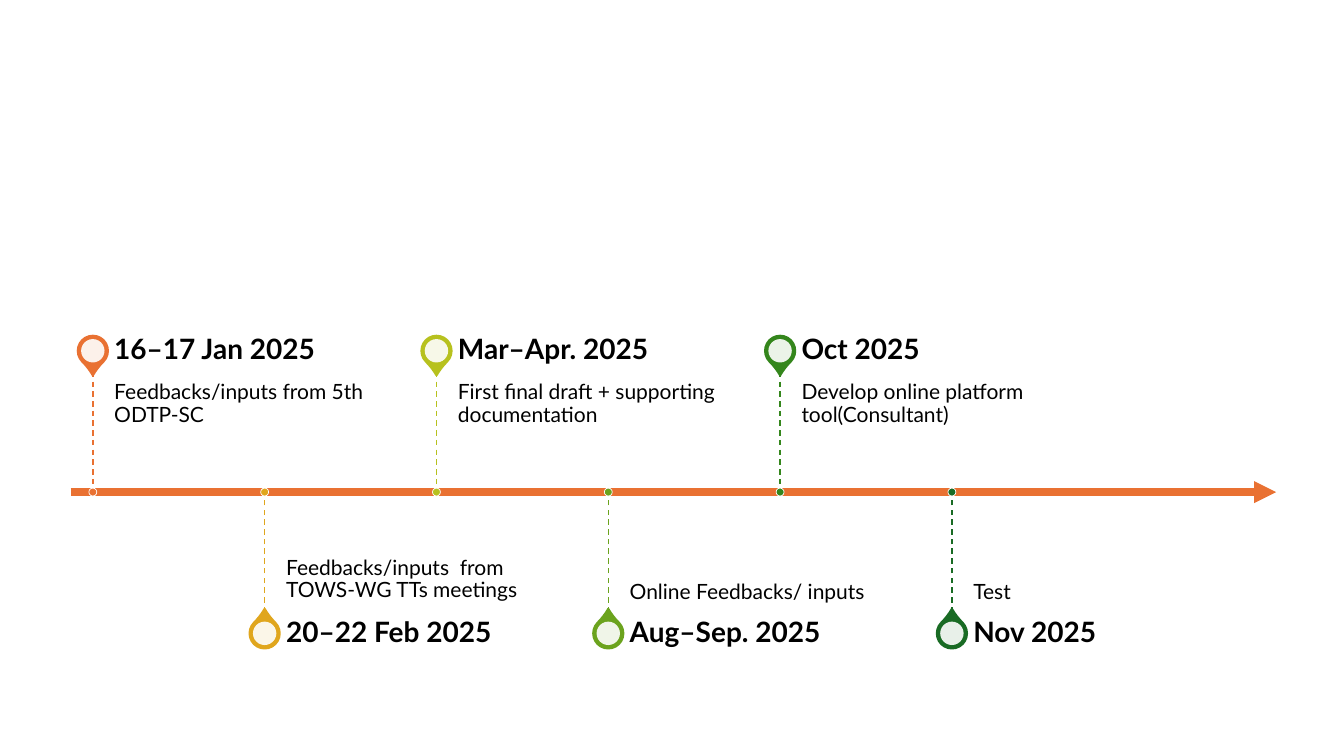
from dataclasses import dataclass

from lxml import etree
from pptx import Presentation
from pptx.dml.color import RGBColor
from pptx.enum.dml import MSO_LINE
from pptx.enum.shapes import MSO_CONNECTOR, MSO_SHAPE
from pptx.enum.text import MSO_ANCHOR
from pptx.oxml.ns import qn
from pptx.shapes.autoshape import Shape
from pptx.shapes.connector import Connector
from pptx.slide import Slide
from pptx.util import Cm, Pt

STRAIGHT = MSO_CONNECTOR.STRAIGHT
TEARDROP, OVAL = MSO_SHAPE.TEAR, MSO_SHAPE.OVAL
DASH = MSO_LINE.DASH
TOP, MIDDLE, BOTTOM = MSO_ANCHOR.TOP, MSO_ANCHOR.MIDDLE, MSO_ANCHOR.BOTTOM

BLACK = RGBColor(0x00, 0x00, 0x00)
WHITE = RGBColor(0xFF, 0xFF, 0xFF)
ORANGE = RGBColor(0xE9, 0x71, 0x32)
AMBER = RGBColor(0xE0, 0xA6, 0x1D)
LIME = RGBColor(0xB7, 0xC1, 0x1E)
LEAF = RGBColor(0x6B, 0xA3, 0x1D)
GREEN = RGBColor(0x34, 0x86, 0x1C)
FOREST = RGBColor(0x19, 0x6B, 0x24)
FONT = "Lato"

# Lengths in centimetres
AXIS_LEFT, AXIS_RIGHT, AXIS_Y = 1.78, 32.16, 12.4
FIRST_X, STEP_X = 2.34, 4.33
STEM, PIN_DISTANCE = 3.03, 3.56
PIN_SIZE, HOLE_SIZE, DOT_SIZE = 0.76, 0.59, 0.2
TEXT_OFFSET, TEXT_WIDTH, DATE_HEIGHT = 0.54, 7.21, 1.07


@dataclass(frozen=True)
class Milestone:
    date: str
    description: str
    color: RGBColor


@dataclass(frozen=True)
class TextStyle:
    size: float
    bold: bool
    anchor: MSO_ANCHOR
    insets: tuple[float, float, float, float]  # left, top, right, bottom


DATE_STYLE = TextStyle(20, True, MIDDLE, (0, 0, 0.36, 0))
UPPER_STYLE = TextStyle(15, False, TOP, (0, 0.25, 0.25, 0.41))
LOWER_STYLE = TextStyle(15, False, BOTTOM, (0, 0.41, 0, 0.25))

MILESTONES = (
    Milestone("16–17 Jan 2025", "Feedbacks/inputs from 5th ODTP-SC", ORANGE),
    Milestone("20–22 Feb 2025", "Feedbacks/inputs  from TOWS-WG TTs meetings", AMBER),
    Milestone("Mar–Apr. 2025", "First final draft + supporting documentation", LIME),
    Milestone("Aug–Sep. 2025", "Online Feedbacks/ inputs", LEAF),
    Milestone("Oct 2025", "Develop online platform tool(Consultant)", GREEN),
    Milestone("Nov 2025", "Test", FOREST),
)


def add_line(slide: Slide, start: tuple[float, float], end: tuple[float, float],
             color: RGBColor, width: float) -> Connector:
    line = slide.shapes.add_connector(STRAIGHT, *map(Cm, start + end))
    line.line.color.rgb = color
    line.line.width = Pt(width)
    etree.SubElement(line._element.spPr, qn("a:effectLst"))
    return line


def add_centred_shape(slide: Slide, kind: MSO_SHAPE, x: float, y: float,
                      size: float, fill: RGBColor) -> Shape:
    """Add an unlined square-bounded shape centred on (x, y)."""
    shape = slide.shapes.add_shape(
        kind, Cm(x - size / 2), Cm(y - size / 2), Cm(size), Cm(size))
    shape.shadow.inherit = False
    shape.fill.solid()
    shape.fill.fore_color.rgb = fill
    shape.line.fill.background()
    return shape


def set_outline(shape: Shape, color: RGBColor, width: float) -> None:
    shape.line.color.rgb = color
    shape.line.width = Pt(width)


def add_text(slide: Slide, text: str, left: float, top: float,
             height: float, style: TextStyle) -> None:
    box = slide.shapes.add_textbox(Cm(left), Cm(top), Cm(TEXT_WIDTH), Cm(height))
    frame = box.text_frame
    frame.word_wrap = True
    frame.vertical_anchor = style.anchor
    (frame.margin_left, frame.margin_top,
     frame.margin_right, frame.margin_bottom) = map(Cm, style.insets)
    frame.text = text
    paragraph = frame.paragraphs[0]
    paragraph.line_spacing = 0.9
    font = paragraph.runs[0].font
    font.name = FONT
    font.size = Pt(style.size)
    font.bold = style.bold
    font.color.rgb = BLACK


def add_axis(slide: Slide) -> None:
    axis = add_line(slide, (AXIS_LEFT, AXIS_Y), (AXIS_RIGHT, AXIS_Y), ORANGE, 5.25)
    etree.SubElement(axis.line._get_or_add_ln(), qn("a:tailEnd"), type="triangle")


def add_pin(slide: Slide, x: float, y: float, rotation: float, color: RGBColor) -> None:
    drop = add_centred_shape(slide, TEARDROP, x, y, PIN_SIZE, color)
    drop.adjustments[0] = 1.15
    drop.rotation = rotation
    set_outline(drop, color, 1.5)
    hole = add_centred_shape(slide, OVAL, x, y, HOLE_SIZE, WHITE)
    hole_color = hole._element.spPr.find(qn("a:solidFill"))[0]
    etree.SubElement(hole_color, qn("a:alpha"), val="90000")


def add_milestone(slide: Slide, milestone: Milestone, x: float, above: bool) -> None:
    direction = -1 if above else 1
    stem_end = AXIS_Y + direction * STEM
    text_left = x + TEXT_OFFSET
    add_pin(slide, x, AXIS_Y + direction * PIN_DISTANCE, 135 if above else 315,
            milestone.color)
    add_text(slide, milestone.description, text_left, min(AXIS_Y, stem_end), STEM,
             UPPER_STYLE if above else LOWER_STYLE)
    add_text(slide, milestone.date, text_left,
             stem_end - DATE_HEIGHT if above else stem_end, DATE_HEIGHT, DATE_STYLE)
    stem = add_line(slide, (x, stem_end), (x, AXIS_Y), milestone.color, 1)
    stem.line.dash_style = DASH
    dot = add_centred_shape(slide, OVAL, x, AXIS_Y, DOT_SIZE, milestone.color)
    set_outline(dot, WHITE, 0.5)


def main() -> None:
    presentation = Presentation()
    presentation.slide_width = Cm(33.87)
    presentation.slide_height = Cm(19.05)
    slide = presentation.slides.add_slide(presentation.slide_layouts[6])
    add_axis(slide)
    for index, milestone in enumerate(MILESTONES):
        add_milestone(slide, milestone, FIRST_X + index * STEP_X, above=index % 2 == 0)
    presentation.save("out.pptx")


if __name__ == "__main__":
    main()
